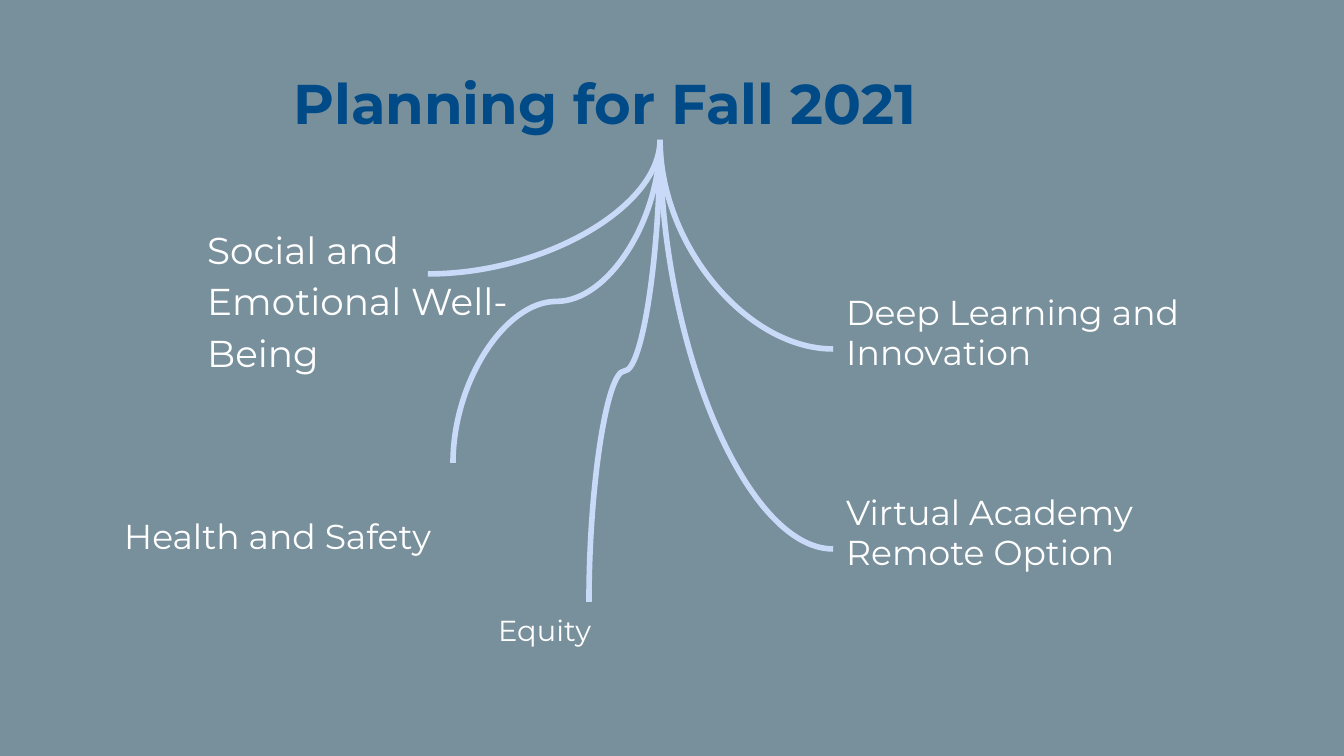
from dataclasses import dataclass

from pptx import Presentation
from pptx.dml.color import RGBColor
from pptx.enum.shapes import MSO_CONNECTOR
from pptx.enum.text import MSO_ANCHOR
from pptx.oxml.ns import qn
from pptx.oxml.xmlchemy import OxmlElement
from pptx.slide import Slide
from pptx.util import Emu, Pt

CURVE = MSO_CONNECTOR.CURVE
TOP = MSO_ANCHOR.TOP
EMU_PER_PX = 914400 / 134.4
QUARTER_TURN = 90 * 60000


@dataclass(frozen=True)
class Theme:
    font: str = "Montserrat"
    background: RGBColor = RGBColor(0x78, 0x90, 0x9C)
    title: RGBColor = RGBColor(0x00, 0x4B, 0x87)
    text: RGBColor = RGBColor(0xFF, 0xFF, 0xFF)
    branch: RGBColor = RGBColor(0xC9, 0xDA, 0xF8)
    title_size: float = 30
    large_size: float = 20
    topic_size: float = 18.5
    small_size: float = 15.5
    branch_width: float = 3


@dataclass(frozen=True)
class Label:
    text: str
    left: int
    top: int
    width: int
    height: int
    size: float
    color: RGBColor
    bold: bool = False
    line_spacing: float = 0.95
    space_after: int = 12


@dataclass(frozen=True)
class Branch:
    end_x: int
    end_y: int
    geometry: str


THEME = Theme()

TITLE = Label("Planning for Fall 2021", 280, 55, 760, 85,
              THEME.title_size, THEME.title, True, 1.0, 0)
TOPICS = [
    Label("Social and Emotional Well-Being", 194, 207, 349, 136,
          THEME.large_size, THEME.text, line_spacing=1.15),
    Label("Deep Learning and Innovation", 833, 281, 410, 136, THEME.topic_size, THEME.text),
    Label("Health and Safety", 111, 505, 410, 136, THEME.topic_size, THEME.text),
    Label("Virtual Academy Remote Option", 833, 481, 410, 136, THEME.topic_size, THEME.text),
    Label("Equity", 485, 602, 207, 85, THEME.small_size, THEME.text),
]

# All branches grow from the middle of the title's lower edge
ROOT_X = TITLE.left + TITLE.width // 2
ROOT_Y = TITLE.top + TITLE.height
ARC, S_CURVE = "curvedConnector2", "curvedConnector3"
BRANCHES = [
    Branch(833, 349, ARC),
    Branch(833, 549, ARC),
    Branch(453, 463, S_CURVE),
    Branch(428, 274, ARC),
    Branch(589, 602, S_CURVE),
]


def px(length: float) -> Emu:
    return Emu(round(length * EMU_PER_PX))


def apply(target: object, values: dict[str, object]) -> None:
    for name, value in values.items():
        setattr(target, name, value)


def draw_label(slide: Slide, label: Label) -> None:
    box = slide.shapes.add_textbox(*map(px, (label.left, label.top, label.width, label.height)))
    inset = Pt(7.2)
    apply(box.text_frame, {
        "word_wrap": True, "vertical_anchor": TOP,
        "margin_left": inset, "margin_right": inset,
        "margin_top": inset, "margin_bottom": inset,
    })
    para = box.text_frame.paragraphs[0]
    apply(para, {"line_spacing": label.line_spacing, "space_after": Pt(label.space_after)})
    span = para.add_run()
    span.text = label.text
    apply(span.font, {"name": THEME.font, "size": Pt(label.size), "bold": label.bold})
    span.font.color.rgb = label.color


def draw_branch(slide: Slide, branch: Branch) -> None:
    # The frame is turned by a quarter, so its width spans the vertical distance
    half_width = (branch.end_y - ROOT_Y) / 2
    half_height = abs(branch.end_x - ROOT_X) / 2
    middle_x = (ROOT_X + branch.end_x) / 2
    middle_y = (ROOT_Y + branch.end_y) / 2
    connector = slide.shapes.add_connector(CURVE, *map(px, (
        middle_x - half_width, middle_y - half_height,
        middle_x + half_width, middle_y + half_height)))
    connector.line.color.rgb = THEME.branch
    connector.line.width = Pt(THEME.branch_width)

    properties = connector._element.spPr
    frame = properties.find(qn("a:xfrm"))
    if branch.end_x > ROOT_X:
        frame.set("rot", str(3 * QUARTER_TURN))
        frame.set("flipH", "1")
    else:
        frame.set("rot", str(QUARTER_TURN))
    properties.find(qn("a:prstGeom")).set("prst", branch.geometry)
    properties.append(OxmlElement("a:effectLst"))


def main() -> None:
    deck = Presentation()
    apply(deck, {"slide_width": px(1344), "slide_height": px(756)})
    slide = deck.slides.add_slide(deck.slide_layouts[6])
    slide.background.fill.solid()
    slide.background.fill.fore_color.rgb = THEME.background

    # Title and topics
    for label in [TITLE, *TOPICS]:
        draw_label(slide, label)

    # Branches from the title to the topics
    for branch in BRANCHES:
        draw_branch(slide, branch)

    deck.save("out.pptx")


if __name__ == "__main__":
    main()
